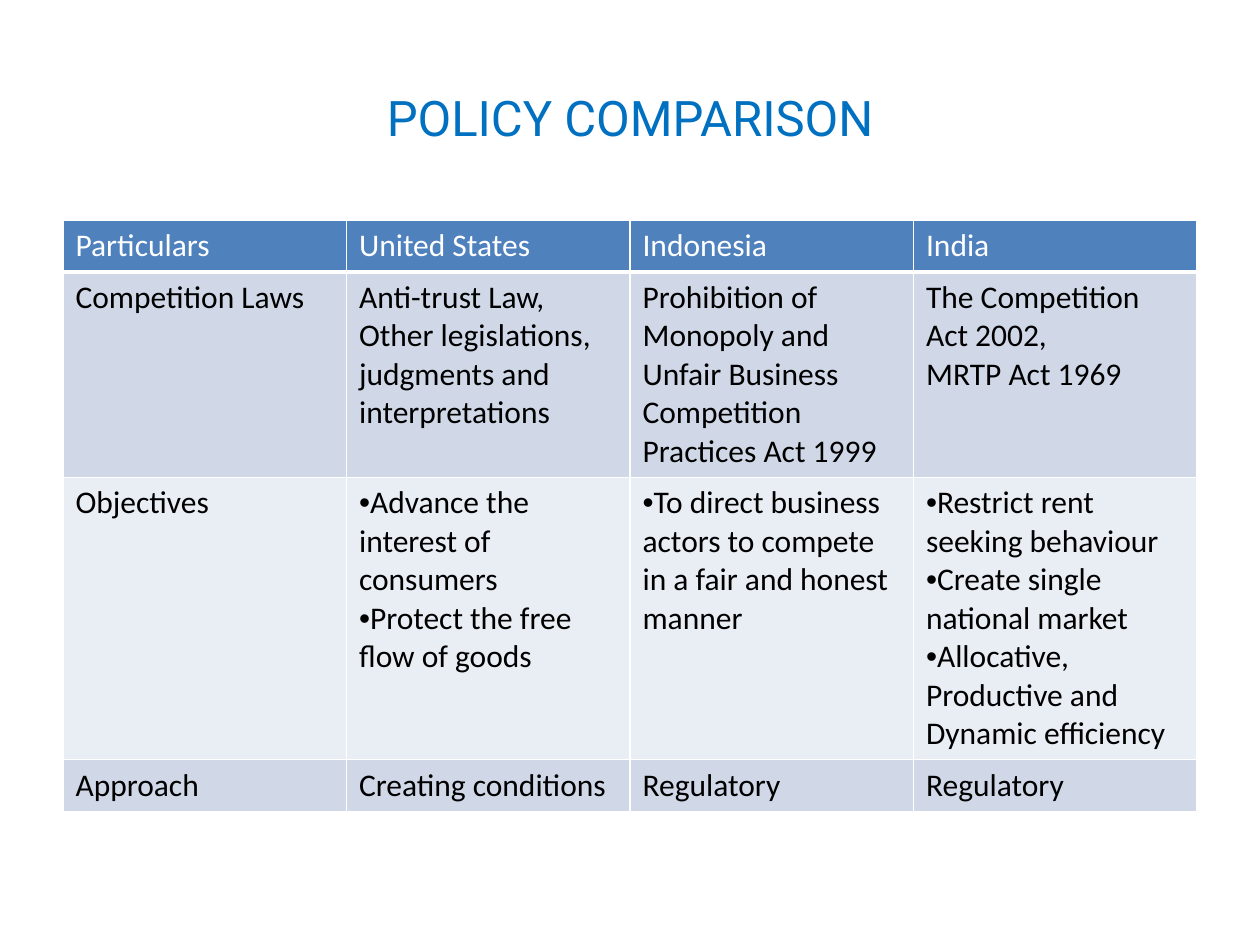
from dataclasses import dataclass

from lxml import etree
from pptx import Presentation
from pptx.dml.color import RGBColor
from pptx.enum.text import MSO_ANCHOR, PP_ALIGN
from pptx.oxml.ns import qn
from pptx.util import Emu, Pt

SCALE = 9144
MIDDLE = MSO_ANCHOR.MIDDLE
CENTER = PP_ALIGN.CENTER
WHITE = RGBColor(0xFF, 0xFF, 0xFF)
BLACK = RGBColor(0, 0, 0)
BLUE = RGBColor(0x00, 0x70, 0xC0)
HEAD = RGBColor(0x4F, 0x81, 0xBD)
BAND = RGBColor(0xD0, 0xD8, 0xE8)
PALE = RGBColor(0xE9, 0xED, 0xF4)


@dataclass(frozen=True)
class Row:
    height: int
    fill: RGBColor
    texts: tuple[str, ...]
    color: RGBColor = BLACK
    rule: int = 1
    listed: bool = False


ROWS = (
    Row(41, HEAD, ("Particulars", "United States", "Indonesia", "India"), WHITE, 3),
    Row(163, BAND, (
        "Competition Laws",
        "Anti-trust Law, Other legislations, judgments and interpretations",
        "Prohibition of Monopoly and Unfair Business Competition Practices Act 1999",
        "The Competition Act 2002,\nMRTP Act 1969",
    )),
    Row(224, PALE, (
        "Objectives",
        "Advance the interest of consumers\nProtect the free flow of goods",
        "To direct business actors to compete in a fair and honest manner",
        "Restrict rent seeking behaviour\nCreate single national market\n"
        "Allocative, Productive and Dynamic efficiency",
    ), listed=True),
    Row(41, BAND, ("Approach", "Creating conditions", "Regulatory", "Regulatory")),
)


def px(size: int) -> Emu:
    return Emu(size * SCALE)


def style(part, font: str, size: int, color: RGBColor) -> None:
    for run in part.runs:
        run.font.name = font
        run.font.size = Pt(size)
        run.font.bold = False
        run.font.color.rgb = color


def border(cell, base: int) -> None:
    props = cell._tc.get_or_add_tcPr()
    for side, width in (("L", 1), ("R", 1), ("T", 1), ("B", base)):
        line = etree.SubElement(props, qn(f"a:ln{side}"), w=str(Pt(width)))
        fill = etree.SubElement(line, qn("a:solidFill"))
        etree.SubElement(fill, qn("a:srgbClr"), val=str(WHITE))


def bullet(part) -> None:
    props = part._p.get_or_add_pPr()
    props.set("marL", "0")
    props.set("indent", "0")
    etree.SubElement(props, qn("a:buFont"), typeface="Arial")
    etree.SubElement(props, qn("a:buChar"), char="•")


def draw_cell(cell, text: str, row: Row, listed: bool) -> None:
    border(cell, row.rule)
    cell.fill.solid()
    cell.fill.fore_color.rgb = row.fill
    cell.text_frame.text = text
    for part in cell.text_frame.paragraphs:
        style(part, "Calibri", 18, row.color)
        if listed:
            bullet(part)


def draw_table(slide, rows: tuple[Row, ...]) -> None:
    count = len(rows[0].texts)
    total = sum(row.height for row in rows)
    table = slide.shapes.add_table(
        len(rows), count, px(50), px(175), px(900), px(total)
    ).table
    for y, row in enumerate(rows):
        table.rows[y].height = px(row.height)
        for x, text in enumerate(row.texts):
            draw_cell(table.cell(y, x), text, row, row.listed and x > 0)


def draw_title(slide, text: str) -> None:
    title = slide.shapes.title
    title.left, title.top, title.width, title.height = map(px, (50, 30, 900, 125))
    frame = title.text_frame
    frame.text = text
    frame.vertical_anchor = MIDDLE
    part = frame.paragraphs[0]
    part.alignment = CENTER
    style(part, "Roboto", 28, BLUE)


def main() -> None:
    deck = Presentation()
    deck.slide_width, deck.slide_height = px(1000), px(750)
    slide = deck.slides.add_slide(deck.slide_layouts[5])
    slide.background.fill.solid()
    slide.background.fill.fore_color.rgb = WHITE
    draw_title(slide, "POLICY COMPARISON")
    draw_table(slide, ROWS)
    deck.save("out.pptx")


if __name__ == "__main__":
    main()
